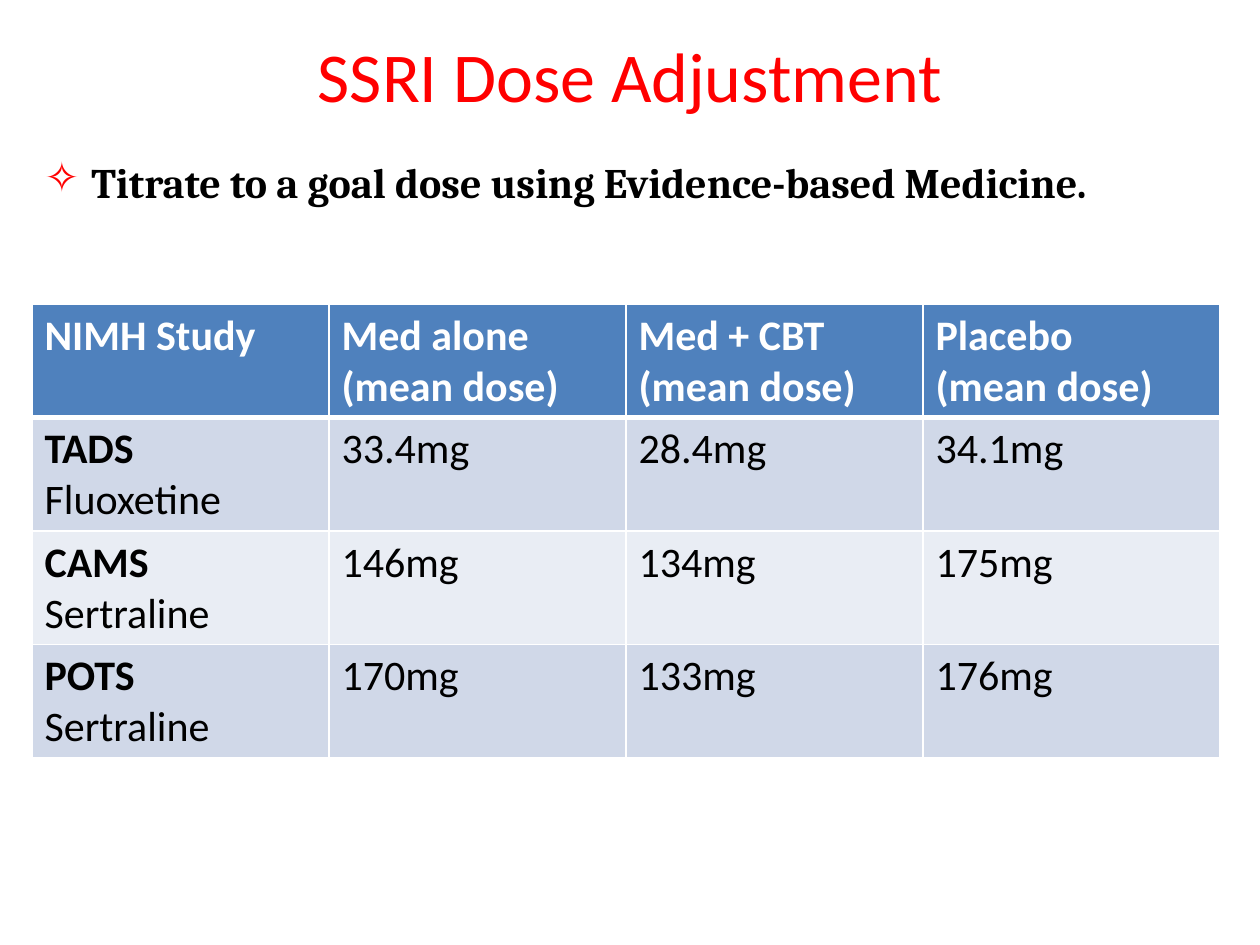
from lxml.etree import SubElement
from pptx import Presentation
from pptx.dml.color import RGBColor
from pptx.enum.text import MSO_ANCHOR, PP_ALIGN
from pptx.oxml.ns import qn
from pptx.util import Emu, Pt

PAGE_WIDTH, PAGE_HEIGHT = 1260, 945
RED, BLACK, WHITE = "FF0000", "000000", "FFFFFF"
HEADER_FILL, BAND_FILLS = "4F81BD", ("D0D8E8", "E9EDF4")
STUDY_ROWS = [
    ["NIMH Study", "Med alone\n(mean dose)", "Med + CBT\n(mean dose)", "Placebo\n(mean dose)"],
    ["TADS\nFluoxetine", "33.4mg", "28.4mg", "34.1mg"],
    ["CAMS\nSertraline", "146mg", "134mg", "175mg"],
    ["POTS\nSertraline", "170mg", "133mg", "176mg"],
]


def px(length):
    return Emu(round(length * 914400 / 126))


def color(value):
    return RGBColor.from_string(value)


def style(para, size, font_name, font_color, bold=False):
    for span in para.runs:
        span.font.size = Pt(size)
        span.font.name = font_name
        span.font.bold = bold
        span.font.color.rgb = color(font_color)


def add_text(page, box, text):
    frame = page.shapes.add_textbox(*map(px, box)).text_frame
    frame.word_wrap = True
    frame.text = text
    return frame


def add_title(page, box):
    frame = add_text(page, box, "SSRI Dose Adjustment")
    frame.vertical_anchor = MSO_ANCHOR.MIDDLE
    para = frame.paragraphs[0]
    para.alignment = PP_ALIGN.CENTER
    style(para, 40, "Calibri", RED)


def add_goal(page, box):
    frame = add_text(page, box, "Titrate to a goal dose using Evidence-based Medicine.")
    frame.margin_top = px(57)
    para = frame.paragraphs[0]
    style(para, 24, "Cambria", BLACK, bold=True)

    # Hanging red star bullet
    properties = para._p.get_or_add_pPr()
    properties.set("marL", str(px(47)))
    properties.set("indent", str(px(-47)))
    bullet_color = SubElement(properties, qn("a:buClr"))
    SubElement(bullet_color, qn("a:srgbClr"), val=RED)
    SubElement(properties, qn("a:buChar"), char="✧")


def set_borders(cell, widths):
    properties = cell._tc.get_or_add_tcPr()
    for index, (side, width) in enumerate(widths.items()):
        line = SubElement(properties, qn(f"a:ln{side}"), w=str(Pt(width)))
        fill = SubElement(line, qn("a:solidFill"))
        SubElement(fill, qn("a:srgbClr"), val=WHITE)
        properties.insert(index, line)  # borders come before the cell fill


def add_dose_table(page, box):
    row_count, column_count = len(STUDY_ROWS), len(STUDY_ROWS[0])
    table = page.shapes.add_table(row_count, column_count, *map(px, box)).table
    for column in table.columns:
        column.width = px(box[2] / column_count)
    for row_index, texts in enumerate(STUDY_ROWS):
        table.rows[row_index].height = px(box[3] / row_count)
        header = row_index == 0
        fill = HEADER_FILL if header else BAND_FILLS[(row_index - 1) % 2]
        for column_index, text in enumerate(texts):
            cell = table.cell(row_index, column_index)
            cell.fill.solid()
            cell.fill.fore_color.rgb = color(fill)
            set_borders(cell, {"L": 1, "R": 1, "T": 3 if row_index == 1 else 1,
                               "B": 3 if header else 1})
            cell.text_frame.text = text
            for line_index, para in enumerate(cell.text_frame.paragraphs):
                study_name = column_index == 0 and line_index == 0
                style(para, 24, "Calibri", WHITE if header else BLACK,
                      bold=header or study_name)


def main():
    deck = Presentation()
    deck.slide_width, deck.slide_height = px(PAGE_WIDTH), px(PAGE_HEIGHT)
    page = deck.slides.add_slide(deck.slide_layouts[6])
    add_title(page, (63, 24, 1134, 101))
    add_goal(page, (32, 100, 1188, 204))
    add_dose_table(page, (32, 304, 1188, 452))
    deck.save("out.pptx")


if __name__ == "__main__":
    main()
